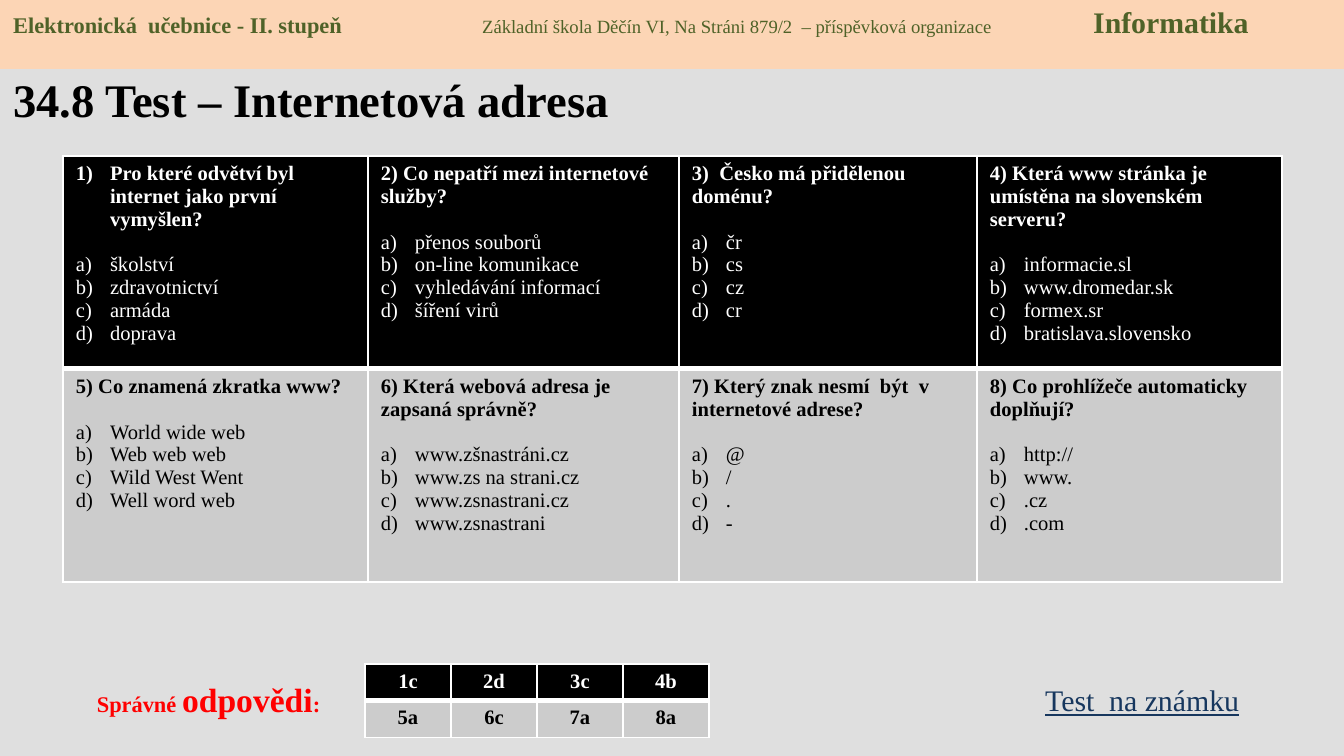
from dataclasses import dataclass

from lxml.etree import SubElement as sub
from pptx import Presentation
from pptx.dml.color import RGBColor as RGB
from pptx.enum.shapes import MSO_SHAPE as SHAPE
from pptx.enum.text import MSO_ANCHOR as ANCHOR, PP_ALIGN as ALIGN
from pptx.oxml import parse_xml
from pptx.oxml.ns import nsdecls, qn
from pptx.util import Pt

SCALE = 914400 / 134.4  # EMU in one px


@dataclass(frozen=True)
class Theme:
    face: str = "Times New Roman"
    back: str = "DFDFDF"
    band: str = "FCD5B5"
    green: str = "4F6228"
    red: str = "FF0000"
    blue: str = "17375E"
    black: str = "000000"
    white: str = "FFFFFF"
    gray: str = "CCCCCC"
    title: int = 25
    large: int = 18
    mid: int = 16
    label: int = 12
    body: int = 11
    small: int = 10
    gap: float = 12.3  # one body line
    thin: int = 1
    thick: int = 3


@dataclass(frozen=True)
class Box:
    x: int
    y: int
    w: int
    h: int


@dataclass(frozen=True)
class Quiz:
    ask: str
    picks: tuple[str, ...]
    auto: bool = False  # question number set as a list number


@dataclass(frozen=True)
class Part:
    text: str
    size: int
    bold: bool = True


T = Theme()

QUIZ = (
    Quiz("Pro které odvětví byl internet jako první vymyšlen?",
         ("školství", "zdravotnictví", "armáda", "doprava"), True),
    Quiz("2) Co nepatří mezi internetové služby?",
         ("přenos souborů", "on-line komunikace", "vyhledávání informací", "šíření virů")),
    Quiz("3)  Česko má přidělenou doménu?", ("čr", "cs", "cz", "cr")),
    Quiz("4) Která www stránka je umístěna na slovenském serveru?",
         ("informacie.sl", "www.dromedar.sk", "formex.sr", "bratislava.slovensko")),
    Quiz("5) Co znamená zkratka www?",
         ("World wide web", "Web web web", "Wild West Went", "Well word web")),
    Quiz("6) Která webová adresa je zapsaná správně?",
         ("www.zšnastráni.cz", "www.zs na strani.cz", "www.zsnastrani.cz", "www.zsnastrani")),
    Quiz("7) Který znak nesmí  být  v internetové adrese?", ("@", "/", ".", "-")),
    Quiz("8) Co prohlížeče automaticky doplňují?", ("http://", "www.", ".cz", ".com")),
)
KEYS = ("1c", "2d", "3c", "4b", "5a", "6c", "7a", "8a")


def px(n: int) -> int:
    return round(n * SCALE)


def place(box: Box) -> tuple[int, ...]:
    return tuple(px(n) for n in (box.x, box.y, box.w, box.h))


def style(font, size: int, color: str, bold: bool) -> None:
    font.name, font.size, font.bold = T.face, Pt(size), bold
    font.color.rgb = RGB.from_string(color)


def number(para, kind: str) -> None:
    props = para._p.get_or_add_pPr()
    props.set("marL", str(px(34)))
    props.set("indent", str(-px(34)))
    sub(props, qn("a:buFont"), typeface="+mj-lt")
    sub(props, qn("a:buAutoNum"), type=kind)


def tabs(para, stops: tuple[int, ...]) -> None:
    group = sub(para._p.get_or_add_pPr(), qn("a:tabLst"))
    for stop in stops:
        sub(group, qn("a:tab"), pos=str(px(stop)), algn="l")


def write(para, parts: tuple[Part, ...], color: str) -> None:
    for part in parts:
        run = para.add_run()
        run.text = part.text
        style(run.font, part.size, color, part.bold)


def label(slide, box: Box, anchor=ANCHOR.TOP):
    frame = slide.shapes.add_textbox(*place(box)).text_frame
    frame.word_wrap, frame.vertical_anchor = True, anchor
    return frame.paragraphs[0]


def edge(cell, top: int, low: int) -> None:
    props = cell._tc.get_or_add_tcPr()
    sides = (("L", T.thin), ("R", T.thin), ("T", top), ("B", low))
    for spot, (side, width) in enumerate(sides):
        props.insert(spot, parse_xml(
            f'<a:ln{side} {nsdecls("a")} w="{Pt(width)}"><a:solidFill>'
            f'<a:srgbClr val="{T.white}"/></a:solidFill></a:ln{side}>'))


def ask(cell, quiz: Quiz, color: str) -> None:
    frame = cell.text_frame
    head = frame.paragraphs[0]
    head.text = quiz.ask
    if quiz.auto:
        number(head, "arabicParenR")
    style(head.font, T.body, color, True)
    for spot, pick in enumerate(quiz.picks):
        para = frame.add_paragraph()
        para.text = pick
        if spot == 0:
            para.space_before = Pt(T.gap)
        number(para, "alphaLcParenR")
        style(para.font, T.body, color, False)


def reply(cell, key: str, color: str) -> None:
    para = cell.text_frame.paragraphs[0]
    para.text, para.alignment = key, ALIGN.CENTER
    style(para.font, T.body, color, True)


def grid(slide, box: Box, cols: tuple[int, ...], items: tuple, fill) -> None:
    """Two rows: dark on top, light below; fill() writes one cell."""
    table = slide.shapes.add_table(2, len(cols), *place(box)).table
    for col, width in zip(table.columns, cols):
        col.width = px(width)
    for spot, item in enumerate(items):
        row, col = divmod(spot, len(cols))
        cell = table.cell(row, col)
        cell.margin_left = cell.margin_right = px(13)
        cell.margin_top = cell.margin_bottom = px(6)
        cell.fill.solid()
        cell.fill.fore_color.rgb = RGB.from_string((T.black, T.gray)[row])
        edge(cell, *((T.thin, T.thick), (T.thick, T.thin))[row])
        fill(cell, item, (T.white, T.black)[row])


def main() -> None:
    deck = Presentation()
    deck.slide_width, deck.slide_height = px(1344), px(756)
    slide = deck.slides.add_slide(deck.slide_layouts[6])
    slide.background.fill.solid()
    slide.background.fill.fore_color.rgb = RGB.from_string(T.back)

    # Title
    para = label(slide, Box(0, 36, 1210, 126), ANCHOR.MIDDLE)
    para.text = "34.8 Test – Internetová adresa"
    style(para.font, T.title, T.black, True)

    # Questions
    grid(slide, Box(63, 156, 1219, 426), (305, 311, 298, 305), QUIZ, ask)

    # Answer key
    para = label(slide, Box(52, 672, 313, 54))
    para.alignment = ALIGN.CENTER
    write(para, (Part("Správné ", T.label), Part("odpovědi", T.large),
                 Part(":", T.label)), T.red)
    grid(slide, Box(365, 664, 344, 70), (86,) * 4, KEYS, reply)

    # Graded test
    para = label(slide, Box(1032, 675, 254, 50))
    para.text = "Test  na známku"
    style(para.font, T.mid, T.blue, False)
    para.font.underline = True

    # Header band
    band = slide.shapes.add_shape(SHAPE.RECTANGLE, *place(Box(0, -3, 1344, 72)))
    band.shadow.inherit = False
    band.fill.solid()
    band.fill.fore_color.rgb = RGB.from_string(T.band)
    band.line.fill.background()
    band.text_frame.word_wrap = True
    band.text_frame.vertical_anchor = ANCHOR.TOP
    para = band.text_frame.paragraphs[0]
    para.alignment = ALIGN.LEFT
    tabs(para, (469, 1080))
    write(para, (
        Part("Elektronická  učebnice - II. stupeň\t", T.label),
        Part("Základní škola Děčín VI, Na Stráni 879/2  – příspěvková organizace\t",
             T.small, False),
        Part("Informatika", T.mid)), T.green)

    deck.save("out.pptx")


if __name__ == "__main__":
    main()
